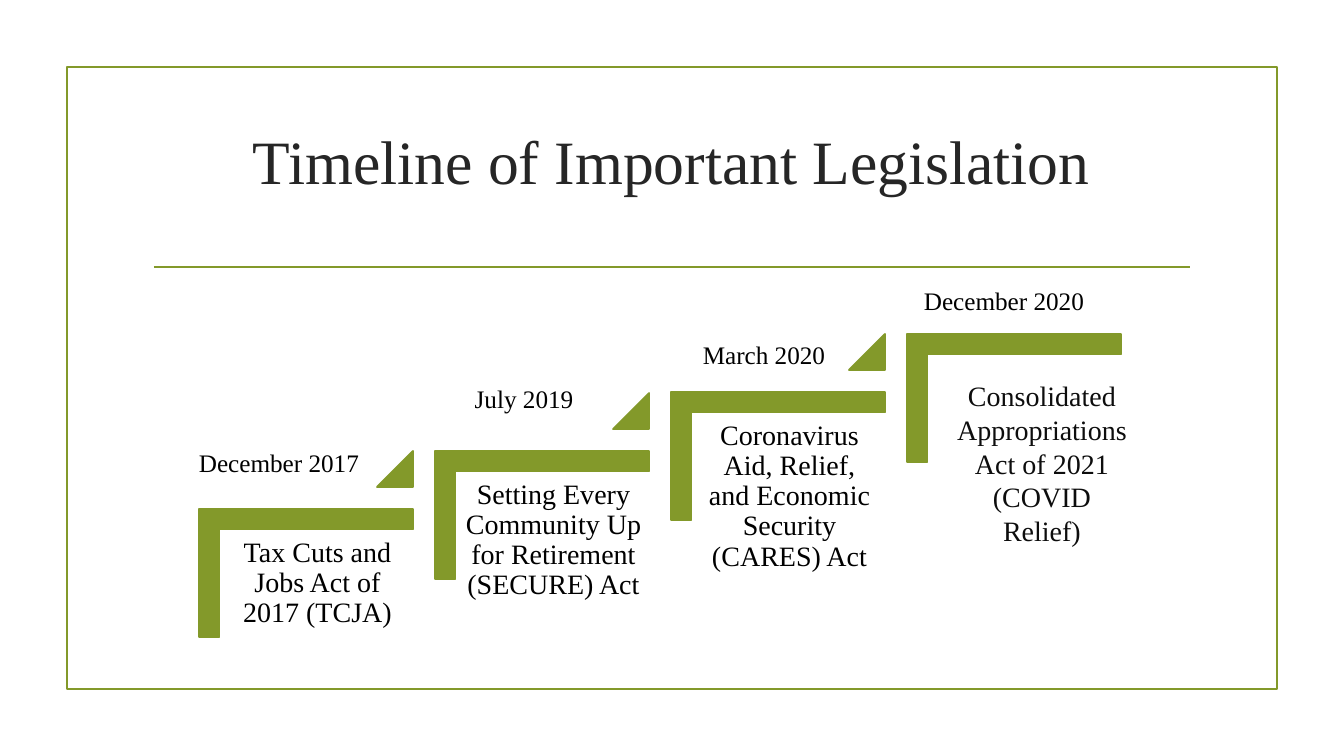
from dataclasses import dataclass

from lxml.etree import SubElement
from pptx import Presentation
from pptx.dml.color import RGBColor
from pptx.enum.shapes import MSO_CONNECTOR as Connector, MSO_SHAPE as Shape
from pptx.enum.text import MSO_ANCHOR as Anchor, PP_ALIGN as Align
from pptx.oxml.ns import qn
from pptx.util import Emu, Pt


@dataclass(frozen=True)
class Theme:
    font: str = "Times New Roman"
    olive: RGBColor = RGBColor(0x83, 0x99, 0x2A)
    heading: RGBColor = RGBColor(0x26, 0x26, 0x26)
    ink: RGBColor = RGBColor(0, 0, 0)
    soft_ink: RGBColor = RGBColor(0x0D, 0x0D, 0x0D)
    title_size: int = 44
    act_size: int = 20
    date_size: int = 18
    stroke: float = 1.25


THEME = Theme()
STEP_RUN = 236
TWO_STEP_RISE = 117

DATES = [
    ("December 2017", 187, 442),
    ("July 2019", 432, 378),
    ("March 2020", 672, 334),
    ("December 2020", 912, 280),
]
ACTS = [
    "Tax Cuts and Jobs Act of 2017 (TCJA)",
    "Setting Every Community Up for Retirement (SECURE) Act",
    "Coronavirus Aid, Relief, and Economic Security (CARES) Act",
]
LATEST_ACT = "Consolidated Appropriations Act of 2021 (COVID Relief)"


def px(length):
    return Emu(round(length * 914400 / 100.8))


def add_outline(slide, kind, left, top, width, height, filled=True):
    outline = slide.shapes.add_shape(kind, px(left), px(top), px(width), px(height))
    outline.shadow.inherit = False
    if filled:
        outline.fill.solid()
        outline.fill.fore_color.rgb = THEME.olive
    else:
        outline.fill.background()
    outline.line.color.rgb = THEME.olive
    outline.line.width = Pt(THEME.stroke)
    return outline


def add_divider(slide, left, right, y):
    divider = slide.shapes.add_connector(
        Connector.STRAIGHT, px(left), px(y), px(right), px(y))
    divider.line.color.rgb = THEME.olive
    divider.line.width = Pt(THEME.stroke)
    SubElement(divider._element.spPr, qn("a:effectLst"))


def add_label(slide, text, left, top, width, height, size, color,
              anchor=Anchor.TOP, inset=None, spacing=None):
    frame = slide.shapes.add_textbox(
        px(left), px(top), px(width), px(height)).text_frame
    frame.word_wrap = True
    frame.vertical_anchor = anchor
    if inset is not None:
        frame.margin_left = frame.margin_right = px(inset)
        frame.margin_top = frame.margin_bottom = px(inset)
    paragraph = frame.paragraphs[0]
    paragraph.text = text
    paragraph.alignment = Align.CENTER
    if spacing is not None:
        paragraph.line_spacing = spacing
    paragraph.font.name = THEME.font
    paragraph.font.size = Pt(size)
    paragraph.font.color.rgb = color


def step_offset(index):
    return STEP_RUN * index, -(TWO_STEP_RISE * index // 2)


def add_stair(slide, index):
    across, up = step_offset(index)
    stair = add_outline(slide, Shape.CORNER, 242 + across, 466 + up, 128, 214)
    stair.rotation = 90
    stair.adjustments[0] = stair.adjustments[1] = 0.16


def add_act(slide, index, act):
    across, up = step_offset(index)
    add_label(slide, act, 221 + across, 530 + up, 193, 169,
              THEME.act_size, THEME.ink, inset=8, spacing=0.9)
    rise_marker = add_outline(slide, Shape.ISOSCELES_TRIANGLE,
                              377 + across, 451 + up, 36, 36)
    rise_marker.adjustments[0] = 1


def main():
    deck = Presentation()
    deck.slide_width, deck.slide_height = px(1344), px(756)
    slide = deck.slides.add_slide(deck.slide_layouts[6])

    add_outline(slide, Shape.RECTANGLE, 67, 67, 1210, 622, filled=False)
    add_divider(slide, 154, 1190, 267)
    add_label(slide, "Timeline of Important Legislation", 143, 108, 1058, 103,
              THEME.title_size, THEME.heading, anchor=Anchor.MIDDLE)

    for index in range(len(DATES)):
        add_stair(slide, index)
    for index, act in enumerate(ACTS):
        add_act(slide, index, act)
    for date, left, top in DATES:
        add_label(slide, date, left, top, 184, 40, THEME.date_size, THEME.ink)
    add_label(slide, LATEST_ACT, 942, 374, 200, 146,
              THEME.act_size, THEME.soft_ink)

    deck.save("out.pptx")


if __name__ == "__main__":
    main()
